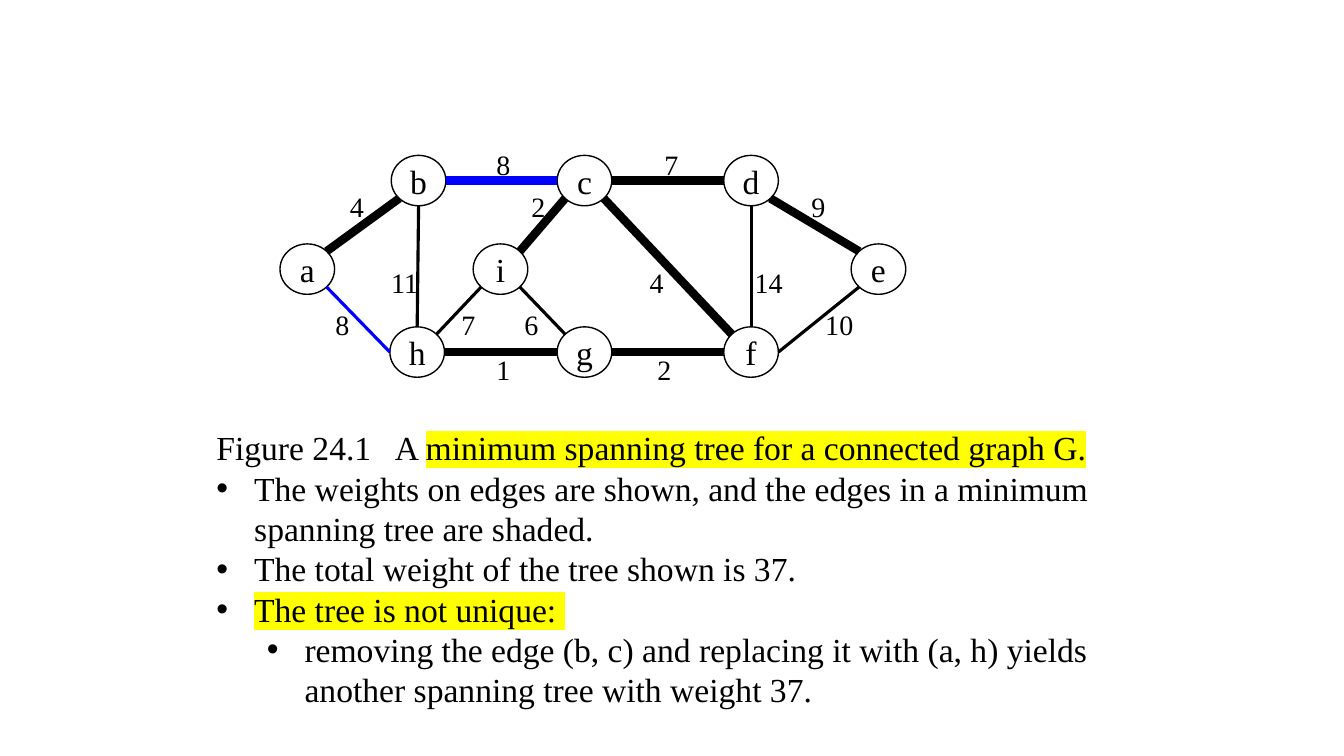
from typing import NamedTuple

from lxml.etree import SubElement
from pptx import Presentation
from pptx.dml.color import RGBColor
from pptx.enum.shapes import MSO_CONNECTOR, MSO_SHAPE
from pptx.enum.text import MSO_ANCHOR, PP_ALIGN
from pptx.oxml.ns import qn
from pptx.util import Pt

FONT = "Times New Roman"
BLACK, WHITE, BLUE, YELLOW = "000000", "FFFFFF", "0000FF", "FFFF00"
NODE_W, NODE_H = 39, 36
TOP_ROW, MIDDLE_ROW, BOTTOM_ROW = 129, 192.25, 251.5
TREE, PLAIN = 6, 2.25
DIAGONAL = 0.707
SIDES = {
    "N": (0, -1), "S": (0, 1), "W": (-1, 0), "E": (1, 0),
    "NW": (-DIAGONAL, -DIAGONAL), "NE": (DIAGONAL, -DIAGONAL),
    "SW": (-DIAGONAL, DIAGONAL), "SE": (DIAGONAL, DIAGONAL),
}


class Node(NamedTuple):
    x: float
    y: float


class Edge(NamedTuple):
    start: str
    start_side: str
    end: str
    end_side: str
    width: float
    weight: str
    weight_x: float
    weight_y: float
    color: str = BLACK


class Phrase(NamedTuple):
    text: str
    highlight: str = ""


class CaptionLine(NamedTuple):
    phrases: list[Phrase]
    indent: float = 0
    level: int = 0
    tab: float = 0


NODES = {
    "a": Node(219.5, MIDDLE_ROW),
    "h": Node(298, BOTTOM_ROW),
    "c": Node(417.5, TOP_ROW),
    "g": Node(417.5, BOTTOM_ROW),
    "d": Node(536.5, TOP_ROW),
    "i": Node(357.5, MIDDLE_ROW),
    "f": Node(536.5, BOTTOM_ROW),
    "e": Node(627.5, MIDDLE_ROW),
    "b": Node(299, TOP_ROW),
}

EDGES = [
    Edge("a", "NE", "b", "SW", TREE, "4", 255, 147),
    Edge("b", "E", "c", "W", TREE, "8", 359.5, 117, BLUE),
    Edge("c", "E", "d", "W", TREE, "7", 479.5, 117),
    Edge("h", "E", "g", "W", TREE, "1", 359.5, 264),
    Edge("g", "E", "f", "W", TREE, "2", 474.5, 264),
    Edge("f", "E", "e", "SW", PLAIN, "10", 599.5, 231.5),
    Edge("a", "SE", "h", "W", PLAIN, "8", 244.5, 231.5, BLUE),
    Edge("d", "SE", "e", "NW", TREE, "9", 584.5, 147),
    Edge("i", "SE", "g", "NW", PLAIN, "6", 379.5, 231.5),
    Edge("i", "SW", "h", "NE", PLAIN, "7", 334.5, 231.5),
    Edge("c", "SW", "i", "NE", TREE, "2", 384.5, 147),
    Edge("h", "N", "b", "S", PLAIN, "11", 289, 201.5),
    Edge("f", "N", "d", "S", PLAIN, "14", 549, 201.5),
    Edge("c", "SE", "f", "NW", TREE, "4", 469, 201.5),
]

CAPTION = [
    CaptionLine([Phrase("Figure 24.1\tA "),
                 Phrase("minimum spanning tree for a connected graph G.", YELLOW)], tab=127.5),
    CaptionLine([Phrase("The weights on edges are shown, and the edges in a minimum "
                        "spanning tree are shaded.")], 27),
    CaptionLine([Phrase("The total weight of the tree shown is 37.")], 27),
    CaptionLine([Phrase("The tree is not unique: ", YELLOW)], 27),
    CaptionLine([Phrase("removing the edge (b, c) and replacing it with (a, h) yields "
                        "another spanning tree with weight 37.")], 63, 1),
]


def rgb(color: str) -> RGBColor:
    return RGBColor.from_string(color)


def add_text(paragraph, phrase: Phrase, size: float) -> None:
    run = paragraph.add_run()
    run.text = phrase.text
    run.font.size = Pt(size)
    run.font.color.rgb = rgb(BLACK)
    run.font.name = FONT
    if phrase.highlight:
        properties = run.font._element
        highlight = SubElement(properties, qn("a:highlight"))
        SubElement(highlight, qn("a:srgbClr"), val=phrase.highlight)
        properties.find(qn("a:solidFill")).addnext(highlight)


def add_weight(slide, edge: Edge) -> None:
    width, height = 36, 24
    frame = slide.shapes.add_textbox(
        Pt(edge.weight_x - width / 2), Pt(edge.weight_y - height / 2),
        Pt(width), Pt(height)).text_frame
    frame.word_wrap = True
    frame.margin_left = frame.margin_right = frame.margin_top = frame.margin_bottom = 0
    frame.vertical_anchor = MSO_ANCHOR.MIDDLE
    frame.paragraphs[0].alignment = PP_ALIGN.CENTER
    add_text(frame.paragraphs[0], Phrase(edge.weight), 20)


def add_caption(slide, lines: list[CaptionLine]) -> None:
    frame = slide.shapes.add_textbox(Pt(147.5), Pt(301.75), Pt(648), Pt(211)).text_frame
    frame.word_wrap = True
    for number, line in enumerate(lines):
        paragraph = frame.add_paragraph() if number else frame.paragraphs[0]
        paragraph.level = line.level
        properties = paragraph._p.get_or_add_pPr()
        if line.indent:
            properties.set("marL", str(Pt(line.indent)))
            properties.set("indent", str(Pt(-27)))
            SubElement(properties, qn("a:buFont"), typeface="Arial")
            SubElement(properties, qn("a:buChar"), char="•")
        if line.tab:
            tabs = SubElement(properties, qn("a:tabLst"))
            SubElement(tabs, qn("a:tab"), pos=str(Pt(line.tab)), algn="l")
        for phrase in line.phrases:
            add_text(paragraph, phrase, 24)


def add_node(slide, name: str, node: Node) -> None:
    circle = slide.shapes.add_shape(
        MSO_SHAPE.OVAL, Pt(node.x - NODE_W / 2), Pt(node.y - NODE_H / 2),
        Pt(NODE_W), Pt(NODE_H))
    circle.shadow.inherit = False
    circle.fill.solid()
    circle.fill.fore_color.rgb = rgb(WHITE)
    circle.line.color.rgb = rgb(BLACK)
    circle.line.width = Pt(1)
    frame = circle.text_frame
    frame.word_wrap = False
    frame.vertical_anchor = MSO_ANCHOR.MIDDLE
    frame.paragraphs[0].alignment = PP_ALIGN.CENTER
    add_text(frame.paragraphs[0], Phrase(name), 24)


def rim_point(name: str, side: str) -> tuple[int, int]:
    """Return the point on a node's outline that faces the given side."""
    node, (dx, dy) = NODES[name], SIDES[side]
    return Pt(node.x + dx * NODE_W / 2), Pt(node.y + dy * NODE_H / 2)


def add_edge(slide, edge: Edge) -> None:
    link = slide.shapes.add_connector(
        MSO_CONNECTOR.STRAIGHT,
        *rim_point(edge.start, edge.start_side), *rim_point(edge.end, edge.end_side))
    link.line.color.rgb = rgb(edge.color)
    link.line.width = Pt(edge.width)
    SubElement(link._element.spPr, qn("a:effectLst"))


def main() -> None:
    presentation = Presentation()
    presentation.slide_width, presentation.slide_height = Pt(960), Pt(540)
    slide = presentation.slides.add_slide(presentation.slide_layouts[6])
    for edge in EDGES:
        add_weight(slide, edge)
    add_caption(slide, CAPTION)
    for name, node in NODES.items():
        add_node(slide, name, node)
    for edge in EDGES:
        add_edge(slide, edge)
    presentation.save("out.pptx")


if __name__ == "__main__":
    main()
